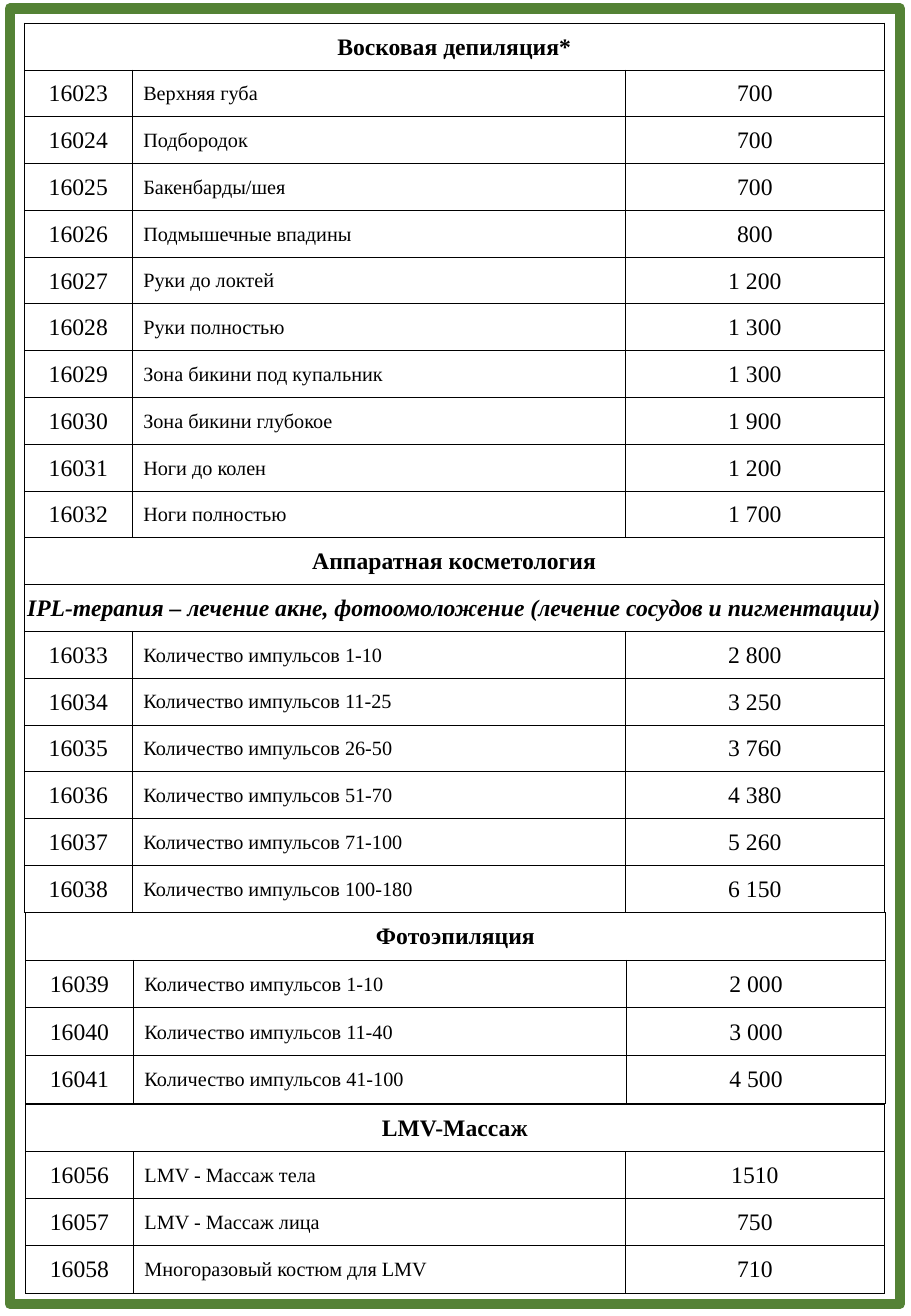
from dataclasses import dataclass

from lxml.etree import SubElement
from pptx import Presentation
from pptx.dml.color import RGBColor
from pptx.enum.shapes import MSO_SHAPE
from pptx.enum.text import MSO_ANCHOR, PP_ALIGN
from pptx.oxml import parse_xml
from pptx.oxml.ns import nsdecls, qn
from pptx.slide import Slide
from pptx.table import _Cell as Cell
from pptx.util import Inches, Pt

GREEN = RGBColor(0x54, 0x82, 0x35)
BLACK = RGBColor(0, 0, 0)
FONT = "Times New Roman"
SIDES = ("lnL", "lnR", "lnT", "lnB")
INSET = 0.01


@dataclass
class Group:
    """Headings, then services whose codes count up from the first one."""
    heads: list[str]
    code: int
    items: list[tuple[str, str]]


@dataclass
class Block:
    left: float
    top: float
    height: float
    cols: tuple[float, float, float]
    groups: list[Group]


WIDE = (0.89, 4.06, 2.13)
BLOCKS = [
    Block(0.2, 0.19, 7.32, WIDE, [
        Group(["Восковая депиляция*"], 16023, [
            ("Верхняя губа", "700"),
            ("Подбородок", "700"),
            ("Бакенбарды/шея", "700"),
            ("Подмышечные впадины", "800"),
            ("Руки до локтей", "1 200"),
            ("Руки полностью", "1 300"),
            ("Зона бикини под купальник", "1 300"),
            ("Зона бикини глубокое", "1 900"),
            ("Ноги до колен", "1 200"),
            ("Ноги полностью", "1 700"),
        ]),
        Group(["Аппаратная косметология",
               "IPL-терапия – лечение акне, фотоомоложение "
               "(лечение сосудов и пигментации)"], 16033, [
            ("Количество импульсов 1-10", "2 800"),
            ("Количество импульсов 11-25", "3 250"),
            ("Количество импульсов 26-50", "3 760"),
            ("Количество импульсов 51-70", "4 380"),
            ("Количество импульсов 71-100", "5 260"),
            ("Количество импульсов 100-180", "6 150"),
        ]),
    ]),
    Block(0.21, 7.51, 1.57, WIDE, [
        Group(["Фотоэпиляция"], 16039, [
            ("Количество импульсов 1-10", "2 000"),
            ("Количество импульсов 11-40", "3 000"),
            ("Количество импульсов 41-100", "4 500"),
        ]),
    ]),
    Block(0.21, 9.09, 1.55, (0.89, 4.05, 2.13), [
        Group(["LMV-Массаж"], 16056, [
            ("LMV - Массаж тела", "1510"),
            ("LMV - Массаж лица", "750"),
            ("Многоразовый костюм для LMV", "710"),
        ]),
    ]),
]


def write(cell: Cell, text: str, *, size: int = 14, bold: bool = False,
          slant: bool = False, indent: float = 0) -> None:
    """Fill a cell with text, centred unless it is indented."""
    para = cell.text_frame.paragraphs[0]
    para.alignment = PP_ALIGN.LEFT if indent else PP_ALIGN.CENTER
    if indent:
        props = para._p.get_or_add_pPr()
        props.set("marL", str(Inches(indent)))
        props.set("indent", "0")
    run = para.add_run()
    run.text = text
    font = run.font
    font.name, font.size = FONT, Pt(size)
    font.bold, font.italic = bold, slant
    font.color.rgb = BLACK


def style(cell: Cell) -> None:
    """Set insets, anchor, empty fill and thin black borders."""
    cell.margin_left = cell.margin_right = cell.margin_top = Inches(INSET)
    cell.margin_bottom = 0
    cell.vertical_anchor = MSO_ANCHOR.MIDDLE
    cell.fill.background()
    props = cell._tc.get_or_add_tcPr()
    for spot, side in enumerate(SIDES):
        line = parse_xml(f'<a:{side} {nsdecls("a")} w="{Pt(0.5)}"/>')
        fill = SubElement(line, qn("a:solidFill"))
        SubElement(fill, qn("a:srgbClr"), val=str(BLACK))
        props.insert(spot, line)


def draw_block(slide: Slide, block: Block) -> None:
    count = sum(len(g.heads) + len(g.items) for g in block.groups)
    frame = slide.shapes.add_table(
        count, len(block.cols), Inches(block.left), Inches(block.top),
        Inches(sum(block.cols)), Inches(block.height))
    table = frame.table
    table.first_row = table.horz_banding = False
    for col, width in zip(table.columns, block.cols):
        col.width = Inches(width)
    for row in table.rows:
        row.height = Inches(block.height / count)
        for cell in row.cells:
            style(cell)

    rows = iter(table.rows)
    for group in block.groups:
        for level, head in enumerate(group.heads):
            cells = next(rows).cells
            cells[0].merge(cells[len(block.cols) - 1])
            write(cells[0], head, bold=True, slant=level > 0)
        for code, (name, price) in enumerate(group.items, group.code):
            cells = next(rows).cells
            write(cells[0], str(code))
            write(cells[1], name, size=12, indent=0.08)
            write(cells[2], price)


def draw_frame(slide: Slide) -> None:
    frame = slide.shapes.add_shape(
        MSO_SHAPE.RECTANGLE, Inches(0.08), Inches(0.07),
        Inches(7.33), Inches(10.66))
    frame.shadow.inherit = False
    frame.fill.background()
    frame.line.color.rgb = GREEN
    frame.line.width = Pt(6)


def main() -> None:
    deck = Presentation()
    deck.slide_width, deck.slide_height = Inches(7.5), Inches(10.83)
    slide = deck.slides.add_slide(deck.slide_layouts[6])
    draw_frame(slide)
    for block in BLOCKS:
        draw_block(slide, block)
    deck.save("out.pptx")


if __name__ == "__main__":
    main()
